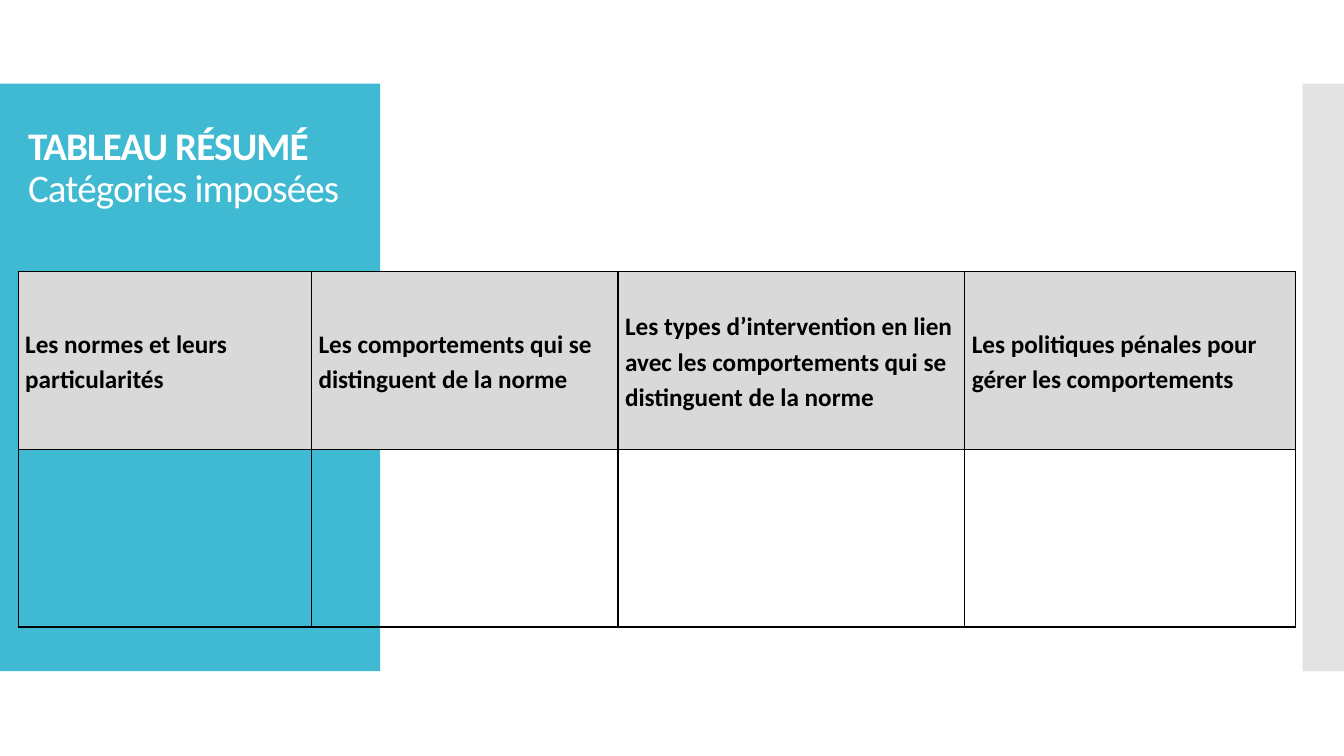
from dataclasses import dataclass

from lxml import etree
from pptx import Presentation
from pptx.dml.color import RGBColor
from pptx.enum import shapes, text
from pptx.oxml import ns
from pptx.util import Inches, Pt


@dataclass(frozen=True)
class Theme:
    font: str = "Calibri"
    teal: str = "40BAD2"
    gray: str = "C8C8C8"
    head: str = "D9D9D9"
    white: str = "FFFFFF"
    black: str = "000000"
    title: float = 27.9
    body: float = 18
    line: float = 1


THEME = Theme()
HEADS = [
    "Les normes et leurs particularités",
    "Les comportements qui se distinguent de la norme",
    "Les types d’intervention en lien avec les comportements qui se distinguent de la norme",
    "Les politiques pénales pour gérer les comportements",
]
WIDTHS = [2.91, 3.04, 3.44, 3.28]
HEIGHTS = [1.77, 1.76]


def paint(fill, color):
    fill.solid()
    fill.fore_color.rgb = RGBColor.from_string(color)


def style(run, size, color, bold):
    font = run.font
    font.name = THEME.font
    font.size = Pt(size)
    font.bold = bold
    font.color.rgb = RGBColor.from_string(color)


def add_band(slide, left, width, color, alpha=None):
    """Add a side band; alpha is its opacity in percent."""
    band = slide.shapes.add_shape(
        shapes.MSO_SHAPE.RECTANGLE,
        Inches(left), Inches(0.83), Inches(width), Inches(5.83))
    band.shadow.inherit = False
    band.line.fill.background()
    paint(band.fill, color)
    if alpha is not None:
        tone = band.fill._xPr.find(".//" + ns.qn("a:srgbClr"))
        etree.SubElement(tone, ns.qn("a:alpha"), val=str(alpha * 1000))


def add_title(slide, lead, sub):
    box = slide.shapes.add_textbox(
        Inches(0.18), Inches(0.99), Inches(3.49), Inches(1.37))
    frame = box.text_frame
    frame.word_wrap = True
    frame.vertical_anchor = text.MSO_ANCHOR.MIDDLE
    frame.text = f"{lead}\v{sub}"
    para = frame.paragraphs[0]
    para.line_spacing = 0.9
    for run, bold in zip(para.runs, (True, False)):
        style(run, THEME.title, THEME.white, bold)
        run.font._element.set("spc", "-60")


def add_edges(cell):
    """Rule all four sides; borders must precede the cell fill."""
    props = cell._tc.get_or_add_tcPr()
    for spot, side in enumerate(("lnL", "lnR", "lnT", "lnB")):
        edge = etree.Element(ns.qn("a:" + side), w=str(Pt(THEME.line)))
        fill = etree.SubElement(edge, ns.qn("a:solidFill"))
        etree.SubElement(fill, ns.qn("a:srgbClr"), val=THEME.black)
        props.insert(spot, edge)


def fill_head(cell, label):
    paint(cell.fill, THEME.head)
    cell.text_frame.text = label
    para = cell.text_frame.paragraphs[0]
    para.line_spacing = 1.15
    style(para.runs[0], THEME.body, THEME.black, True)
    cell.vertical_anchor = text.MSO_ANCHOR.MIDDLE
    cell.margin_left = cell.margin_right = Inches(0.07)
    cell.margin_top = cell.margin_bottom = 0


def add_grid(slide):
    table = slide.shapes.add_table(
        len(HEIGHTS), len(WIDTHS), Inches(0.18), Inches(2.69),
        Inches(sum(WIDTHS)), Inches(sum(HEIGHTS))).table
    table.horz_banding = False
    for row, height in zip(table.rows, HEIGHTS):
        row.height = Inches(height)
    for col, width in enumerate(WIDTHS):
        table.columns[col].width = Inches(width)
        fill_head(table.cell(0, col), HEADS[col])
        table.cell(1, col).fill.background()
    for cell in table.iter_cells():
        add_edges(cell)


def main():
    deck = Presentation()
    deck.slide_width = Inches(13.33)
    deck.slide_height = Inches(7.5)
    slide = deck.slides.add_slide(deck.slide_layouts[6])
    paint(slide.background.fill, THEME.white)
    add_band(slide, 0, 3.77, THEME.teal)
    add_band(slide, 12.92, 0.41, THEME.gray, alpha=50)
    add_title(slide, "TABLEAU RÉSUMÉ", "Catégories imposées")
    add_grid(slide)
    deck.save("out.pptx")


if __name__ == "__main__":
    main()
